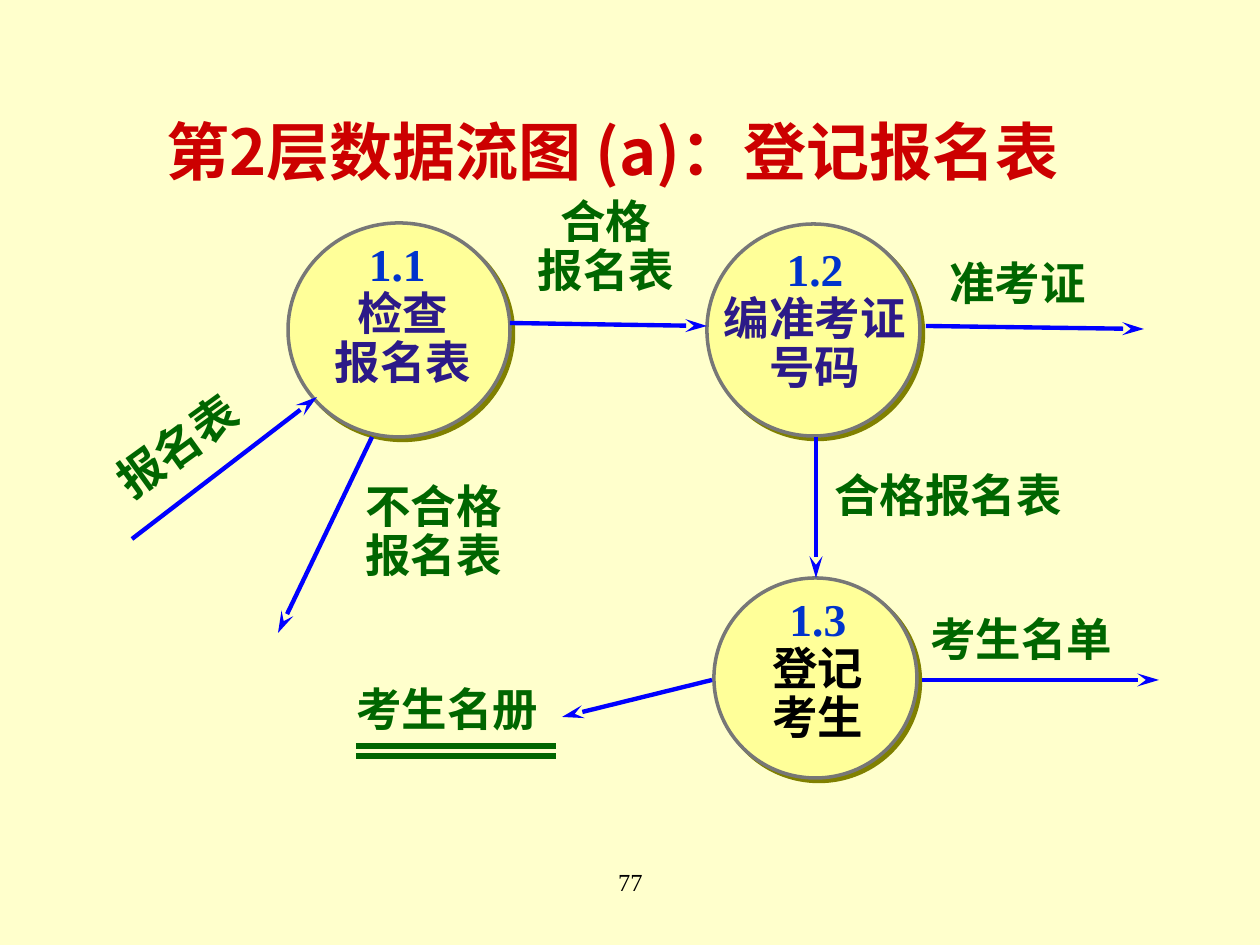
from lxml.etree import SubElement
from pptx import Presentation
from pptx.dml.color import RGBColor
from pptx.enum.shapes import MSO_CONNECTOR, MSO_SHAPE
from pptx.enum.text import PP_ALIGN
from pptx.oxml.ns import qn
from pptx.util import Emu, Pt

CJK, ROMAN = "Noto Sans CJK JP", "Times New Roman"
GREEN, BLUE, NAVY, RED = "006600", "0033CC", "2C1A88", "CC0000"
BLACK, PAPER, FLOW = "000000", "FFFFCC", "0000FF"


def px(num):
    return Emu(round(num * 914400 / 126))


def rgb(code):
    return RGBColor.from_string(code)


class Page:
    label = {"size": Pt(26), "bold": True, "name": ROMAN}

    def __init__(self, deck):
        self.slide = deck.slides.add_slide(deck.slide_layouts[6])
        self.shapes = self.slide.shapes
        fill = self.slide.background.fill
        fill.solid()
        fill.fore_color.rgb = rgb(PAPER)

    def text(self, box, lines, color=GREEN, mid=False, space=None,
             wrap=True, turn=0, **style):
        """Lines are strings, or (string, color) pairs."""
        shape = self.shapes.add_textbox(*map(px, box))
        shape.rotation = turn
        frame = shape.text_frame
        frame.word_wrap = wrap
        for i, line in enumerate(lines):
            words, tint = (line, color) if isinstance(line, str) else line
            para = frame.paragraphs[0] if i == 0 else frame.add_paragraph()
            para.alignment = PP_ALIGN.CENTER if mid else PP_ALIGN.LEFT
            if space:
                para.line_spacing = space
            run = para.add_run()
            run.text = words
            for key, value in (self.label | style).items():
                setattr(run.font, key, value)
            run.font.color.rgb = rgb(tint)
            east = SubElement(run.font._element, qn("a:ea"))
            east.set("typeface", CJK)

    def circle(self, box):
        shape = self.shapes.add_shape(MSO_SHAPE.OVAL, *map(px, box))
        shape.fill.solid()
        shape.fill.fore_color.rgb = rgb("FFFF99")
        shape.line.color.rgb = rgb("777777")
        shape.line.width = Pt(2)
        # Hard offset shadow, down and to the right
        shape.shadow.inherit = False
        effects = shape._element.spPr.find(qn("a:effectLst"))
        shade = SubElement(effects, qn("a:outerShdw"), dist=str(Pt(2.8)),
                           dir="2700000", algn="ctr", rotWithShape="0")
        SubElement(shade, qn("a:srgbClr"), val="808000")

    def line(self, ends, color=FLOW, width=2.5, arrow=True):
        link = self.shapes.add_connector(MSO_CONNECTOR.STRAIGHT,
                                         *map(px, ends))
        link.line.color.rgb = rgb(color)
        link.line.width = Pt(width)
        if arrow:
            SubElement(link.line._get_or_add_ln(), qn("a:tailEnd"),
                       type="stealth", w="med", len="lg")
        SubElement(link._element.spPr, qn("a:effectLst"))


def main():
    deck = Presentation()
    deck.slide_width, deck.slide_height = px(1260), px(945)
    page = Page(deck)

    # Title and page number
    page.text((154, 106, 992, 89), ["第2层数据流图 (a)：登记报名表"], RED,
              size=Pt(36), name=CJK)
    page.text((431, 861, 399, 63), ["77"], BLACK, mid=True,
              size=Pt(14), bold=False)

    # Process circles
    for box in [
        (288, 223, 222, 214),
        (707, 224, 213, 212),
        (714, 578, 203, 200),
    ]:
        page.circle(box)

    # Data flows, above the circles so that every head shows
    for ends in [
        (132, 539, 317, 397),
        (510, 323, 707, 326),
        (372, 437, 278, 633),
        (926, 326, 1144, 329),
        (816, 437, 816, 578),
        (922, 680, 1159, 680),
        (712, 680, 562, 717),
    ]:
        page.line(ends)

    # Process names
    for box, num, names, color in [
        ((277, 236, 252, 160), "1.1 ", ["检查", "报名表"], NAVY),
        ((709, 241, 212, 160), "1.2", ["编准考证号码"], NAVY),
        ((712, 591, 212, 160), "1.3", ["登记", "考生"], BLACK),
    ]:
        lines = [(num, BLUE)] + [(name, color) for name in names]
        page.text(box, lines, mid=True, space=0.9)

    # Flow labels
    page.text((93, 402, 195, 67), ["报名表"], turn=324.2)
    page.text((490, 193, 232, 111), ["合格", "报名表"], mid=True, space=0.9)
    page.text((353, 478, 181, 111), ["不合格", "报名表"], space=0.9)
    page.text((937, 249, 183, 67), ["准考证"])
    page.text((918, 605, 227, 67), ["考生名单"])
    page.text((822, 461, 255, 67), ["合格报名表"], wrap=False)

    # Data store with its double rule
    page.text((344, 675, 208, 67), ["考生名册"], wrap=False)
    for y in (746, 756):
        page.line((356, y, 556, y), GREEN, 3, arrow=False)

    deck.save("out.pptx")


if __name__ == "__main__":
    main()
